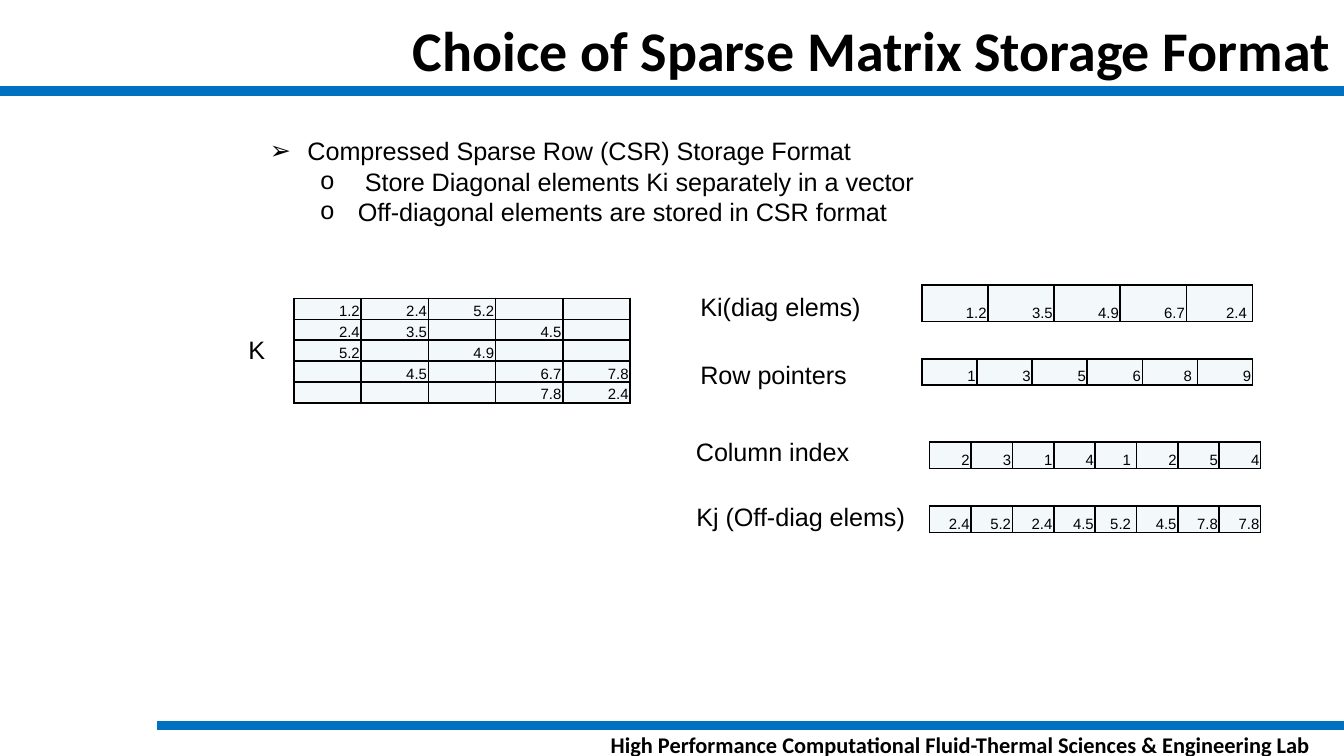
from lxml import etree
from pptx import Presentation, util as u
from pptx.dml.color import RGBColor
from pptx.enum import shapes, text
from pptx.oxml import ns

deck = Presentation()
deck.slide_width = u.Inches(10)
deck.slide_height = deck.slide_width * 9 // 16
slide = deck.slides.add_slide(deck.slide_layouts[6])
# Square grid: 100 columns across the slide, rows of the same size
UNIT = deck.slide_width // 100
BLACK, BLUE, PALE = "000000", "0070C0", "F3F9FA"


def color(hex_code):
    return RGBColor.from_string(hex_code)


def add_text(lines, left, top, width, height, size=13.5, font="Arial", bold=False,
             align=text.PP_ALIGN.LEFT):
    box = slide.shapes.add_textbox(*(round(n * UNIT) for n in (left, top, width, height)))
    frame = box.text_frame
    frame.text = "\n".join(lines)
    frame.word_wrap = False
    for line in frame.paragraphs:
        line.alignment = align
    return frame if not style(frame, size, font, bold) else None


def style(frame, size, font, bold=False):
    for line in frame.paragraphs:
        line.font.size, line.font.name, line.font.bold = u.Pt(size), font, bold
        line.font.color.rgb = color(BLACK)


# Footer
footer = add_text(["High Performance Computational Fluid-Thermal Sciences & Engineering Lab"],
                  43.8, 54.4, 53.7, 2, 12, "Calibri", True, text.PP_ALIGN.RIGHT)
footer.word_wrap = True
footer.margin_left = footer.margin_right = footer.margin_top = footer.margin_bottom = 0

# Blue rules above the footer and below the title
for start, end, row in ((100, 11.7, 54), (0, 100, 6.77)):
    rule = slide.shapes.add_connector(shapes.MSO_CONNECTOR.STRAIGHT, round(start * UNIT),
                                      round(row * UNIT), round(end * UNIT), round(row * UNIT))
    rule.line.color.rgb, rule.line.width = color(BLUE), u.Pt(5)
    etree.SubElement(rule._element.spPr, ns.qn("a:effectLst"))

# Title
title = add_text(["Choice of Sparse Matrix Storage Format"], 29.4, -1.05, 70.6, 9.4,
                 30, "Calibri", True, text.PP_ALIGN.RIGHT)
title.word_wrap = True
title.vertical_anchor = text.MSO_ANCHOR.MIDDLE

# Storage format outline
outline = add_text(["Compressed Sparse Row (CSR) Storage Format",
                    " Store Diagonal elements Ki separately in a vector",
                    "Off-diagonal elements are stored in CSR format"], 19.1, 9.6, 50.6, 7.8)
for point, (level, bullet, indent) in zip(outline.paragraphs,
                                          ((0, "➢", 2.8), (1, "o", 6.55), (1, "o", 6.55))):
    point.level = level
    props = point._p.get_or_add_pPr()
    props.set("marL", str(round(indent * UNIT)))
    props.set("indent", str(round(-2.8 * UNIT)))
    props.insert(0, etree.Element(ns.qn("a:buFont"), typeface="Arial"))
    props.insert(1, etree.Element(ns.qn("a:buChar"), char=bullet))

# Matrix K and its CSR arrays: left, top, column width, row height, values
arrays = [
    (21.87, 22.2, 5, 1.56, [["1.2", "2.4", "5.2", "", ""],
                            ["2.4", "3.5", "", "4.5", ""],
                            ["5.2", "", "4.9", "", ""],
                            ["", "4.5", "", "6.7", "7.8"],
                            ["", "", "", "7.8", "2.4"]]),
    (68.6, 21.2, 4.92, 2.74, [["1.2", "3.5", "4.9", "6.7", "2.4 "]]),
    (68.6, 26.7, 4.1, 1.95, [["1", "3", "5", "6", "8 ", "9"]]),
    (69.17, 32.9, 3.08, 1.95, [["2", "3", "1", "4", "1 ", "2", "5", "4"]]),
    (69.17, 37.67, 3.08, 1.95, [["2.4", "5.2", "2.4", "4.5", "5.2 ", "4.5", "7.8", "7.8"]]),
]
for left, top, col_width, row_height, values in arrays:
    rows, cols = len(values), len(values[0])
    grid = slide.shapes.add_table(rows, cols, *(round(n * UNIT) for n in (
        left, top, cols * col_width, rows * row_height))).table
    grid.first_row = grid.horz_banding = False
    for cell, value in zip(grid.iter_cells(), sum(values, [])):
        cell.margin_left = cell.margin_right = cell.margin_top = round(0.1 * UNIT)
        cell.margin_bottom = 0
        cell.vertical_anchor = text.MSO_ANCHOR.BOTTOM
        for side in ("lnL", "lnR", "lnT", "lnB"):
            border = etree.SubElement(cell._tc.get_or_add_tcPr(), ns.qn(f"a:{side}"),
                                      w=str(u.Pt(1)))
            paint = etree.SubElement(border, ns.qn("a:solidFill"))
            etree.SubElement(paint, ns.qn("a:srgbClr"), val=BLACK)
        cell.fill.solid()
        cell.fill.fore_color.rgb = color(PALE)
        cell.text = value
        entry = cell.text_frame.paragraphs[0]
        entry.alignment = text.PP_ALIGN.RIGHT
        style(cell.text_frame, 8, "Arial")
        if not value:  # keeps empty cells as low as the filled ones
            etree.SubElement(entry._p, ns.qn("a:endParaRPr"), sz="800")

# Array names
for name, left, top, width in (("Ki(diag elems)", 51.13, 21.2, 14.1),
                               ("Row pointers", 51.13, 26.25, 13.1),
                               ("Column index", 50.8, 32, 13.6),
                               ("Kj (Off-diag elems)", 50.83, 36.8, 17.8),
                               ("K", 17.5, 24.4, 3.3)):
    add_text([name], left, top, width, 3.3)

deck.save("out.pptx")
